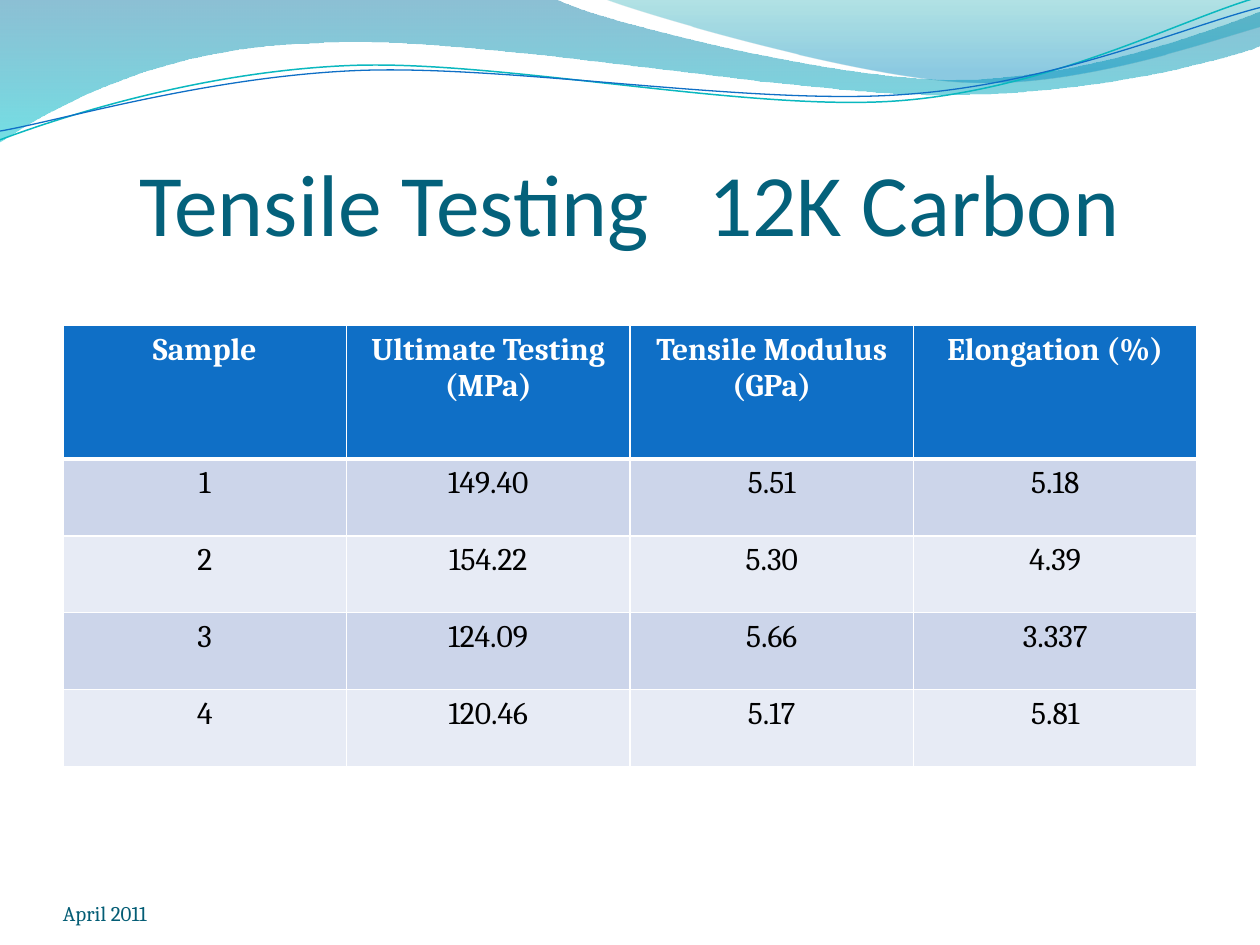
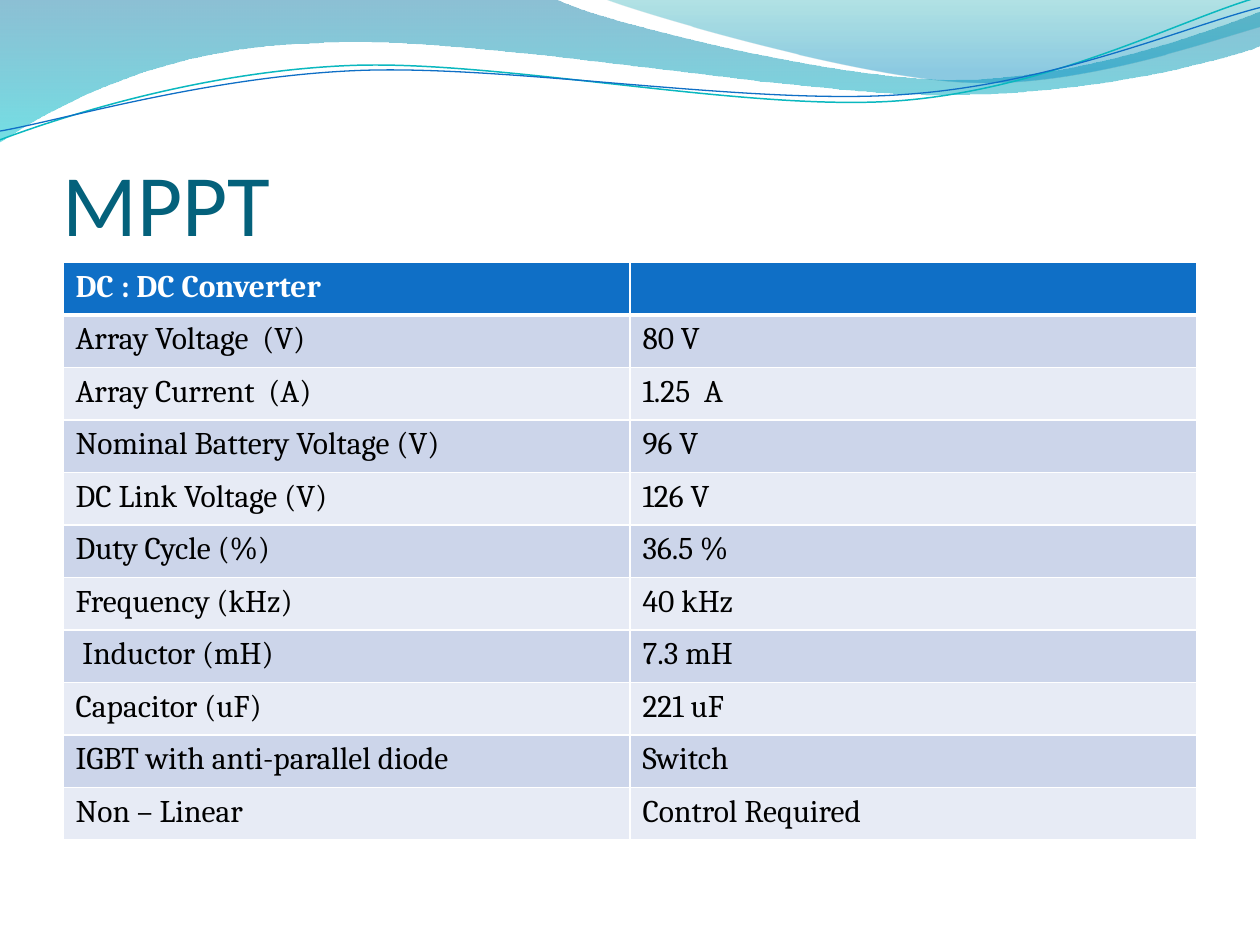
from math import cos, radians, sin

from lxml import etree
from pptx import Presentation
from pptx.dml.color import RGBColor
from pptx.enum.text import MSO_ANCHOR, PP_ALIGN
from pptx.oxml.ns import qn
from pptx.util import Inches, Pt

LEFT, CENTER = PP_ALIGN.LEFT, PP_ALIGN.CENTER
BOTTOM = MSO_ANCHOR.BOTTOM
TITLE, FOOTER, HEADER = "04617B", "045D75", "0F6FC6"
BANDS = ["CCD5EA", "E7EBF5"]
WHITE, BLACK = "FFFFFF", "000000"
TILT = 2.7  # degrees the wave lines are turned to the left

prs = Presentation()
prs.slide_width, prs.slide_height = Inches(10), Inches(7.5)
W, H = prs.slide_width, prs.slide_height
MARGIN = W * 0.05
BODY_W = W - 2 * MARGIN

# Each wave is a start point, then straight (2 numbers) or Bezier (6 numbers) segments, in inches
FILLED_WAVES = [
    ([(0, 0), (4.4, -0.01), (4.76, 0.17, 6.64, 0.63, 7.58, 0.63),
      (8.53, 0.63, 9.58, 0.26, 10, 0.09), (10.01, 0.36),
      (9.83, 0.44, 8.7, 0.76, 7.46, 0.75), (6.22, 0.75, 3.82, 0.28, 2.57, 0.34),
      (1.29, 0.36, 0.46, 0.83, -0.01, 1.13), (0, 0)],
     [(0, "0074A1", 45), (1, "00C6CF", 55)]),
    ([(4.79, -0.01), (5.09, 0.11, 6.82, 0.62, 7.69, 0.65),
      (8.56, 0.69, 9.61, 0.32, 10, 0.21), (10, 0), (4.79, -0.01)],
     [(0, "00A1A9", 30), (0.8, "008BBF", 45)]),
]
LINE_WAVES = [
    ([(0, 1.11), (0.48, 0.93, 1.58, 0.57, 2.77, 0.52),
      (3.95, 0.47, 5.93, 0.89, 7.13, 0.8), (8.33, 0.71, 9.38, 0.15, 9.98, -0.02)],
     (4.99, 0.575), "0AB8BF", 0.85),
    ([(0, 1.04), (0.47, 0.96, 1.64, 0.61, 2.83, 0.56),
      (4.03, 0.51, 5.97, 0.84, 7.17, 0.75), (8.36, 0.67, 9.41, 0.21, 10, 0.06)],
     (4.995, 0.59), "0F6FC6", 0.75),
]

# Title, alignment, table top, row heights, table rows, footer
SLIDES = [
    ("Tensile Testing   12K Carbon", CENTER, 31 / 12, [1.06] + [0.61] * 4, [
        ("Sample", "Ultimate Testing (MPa)", "Tensile Modulus (GPa)", "Elongation (%)"),
        ("1", "149.40", "5.51", "5.18"),
        ("2", "154.22", "5.30", "4.39"),
        ("3", "124.09", "5.66", "3.337"),
        ("4", "120.46", "5.17", "5.81")], "April 2011"),
    ("MPPT", LEFT, 25 / 12, [5 / 12] * 11, [
        ("DC : DC Converter", ""),
        ("Array Voltage  (V)", "80 V"),
        ("Array Current  (A)", "1.25  A"),
        ("Nominal Battery Voltage (V)", "96 V"),
        ("DC Link Voltage (V)", "126 V"),
        ("Duty Cycle (%)", "36.5 %"),
        ("Frequency (kHz)", "40 kHz"),
        (" Inductor (mH)", "7.3 mH"),
        ("Capacitor (uF)", "221 uF"),
        ("IGBT with anti-parallel diode", "Switch"),
        ("Non – Linear", "Control Required")], None),
]


def rgb(color):
    return RGBColor.from_string(color)


def add_wave(s, segments, close, tilt=0, center=(0, 0)):
    cx, cy = center
    c, d = cos(radians(tilt)), sin(radians(tilt))
    points = []
    for seg in segments:
        for x, y in zip(seg[::2], seg[1::2]):
            points.append((Inches(cx + (x - cx) * c - (y - cy) * d),
                           Inches(cy + (x - cx) * d + (y - cy) * c)))
    builder = s.shapes.build_freeform(*points[0])
    builder.add_line_segments(points[1:], close=close)
    sp = builder.convert_to_shape()
    sp.rotation = -tilt % 360
    sp.shadow.inherit = False
    # Join each three points of a Bezier segment into one curve
    lines = iter(list(sp.element.iter(qn("a:lnTo"))))
    for seg in segments[1:]:
        first = next(lines)
        if len(seg) == 6:
            curve = etree.Element(qn("a:cubicBezTo"))
            first.addprevious(curve)
            for ln in (first, next(lines), next(lines)):
                curve.append(ln[0])
                ln.getparent().remove(ln)
    return sp


for title, align, top, heights, rows, footer in SLIDES:
    s = prs.slides.add_slide(prs.slide_layouts[6])

    # Wave band
    for segments, stops in FILLED_WAVES:
        sp = add_wave(s, segments, True)
        sp.line.fill.background()
        sp.fill.gradient()
        sp.fill.gradient_angle = 270
        for stop, (position, color, opacity) in zip(sp.fill.gradient_stops, stops):
            stop.position = position
            stop.color.rgb = rgb(color)
        for clr, (position, color, opacity) in zip(sp.element.iter(qn("a:srgbClr")), stops):
            etree.SubElement(clr, qn("a:alpha"), val=str(opacity * 1000))
    for segments, center, color, width in LINE_WAVES:
        sp = add_wave(s, segments, False, TILT, center)
        sp.fill.background()
        sp.line.color.rgb = rgb(color)
        sp.line.width = Pt(width)

    # Title and footer
    texts = [(title, 23 / 30, BODY_W, 1.25, 0.05, align, 50, "Calibri", TITLE)]
    if footer:
        texts.append((footer, 6.95, W * 0.233, 0.4, 0, LEFT, 12, "Cambria", FOOTER))
    for text, y, width, height, inset, al, size, font, color in texts:
        tf = s.shapes.add_textbox(int(MARGIN), Inches(y), int(width), Inches(height)).text_frame
        tf.word_wrap = True
        tf.vertical_anchor = BOTTOM
        tf.margin_left = tf.margin_right = tf.margin_bottom = 0
        tf.margin_top = Inches(inset)
        p = tf.paragraphs[0]
        p.text = text
        p.alignment = al
        r = p.runs[0]
        r.font.size, r.font.name = Pt(size), font
        r.font.color.rgb = rgb(color)

    # Table
    cols = len(rows[0])
    table = s.shapes.add_table(len(rows), cols, int(MARGIN), Inches(top), int(BODY_W),
                               Inches(sum(heights))).table
    table.horz_banding = False
    for row, height in zip(table.rows, heights):
        row.height = Inches(height)
    for i, values in enumerate(rows):
        for j, value in enumerate(values):
            cell = table.cell(i, j)
            tcPr = cell._tc.get_or_add_tcPr()
            for side in "LRTB":
                thick = (i, side) in [(0, "B"), (1, "T")]
                ln = etree.SubElement(tcPr, qn("a:ln" + side), w=str(Pt(3 if thick else 1)))
                fill = etree.SubElement(ln, qn("a:solidFill"))
                etree.SubElement(fill, qn("a:srgbClr"), val=WHITE)
            cell.fill.solid()
            cell.fill.fore_color.rgb = rgb(BANDS[(i - 1) % 2] if i else HEADER)
            p = cell.text_frame.paragraphs[0]
            p.text = value
            p.alignment = align
            for r in p.runs:
                r.font.size, r.font.name = Pt(18), "Cambria"
                r.font.bold = i == 0
                r.font.color.rgb = rgb(BLACK if i else WHITE)

prs.save("out.pptx")
